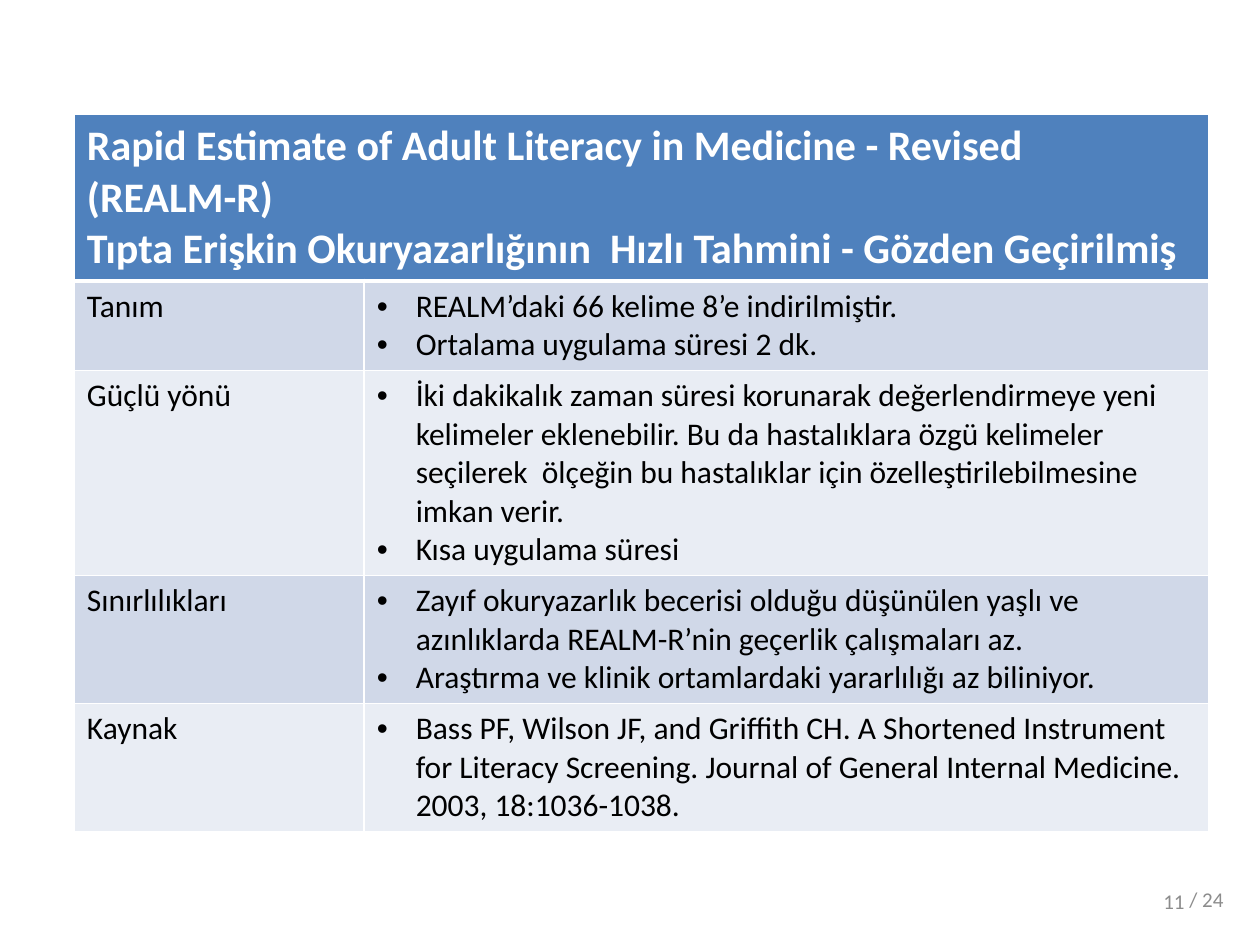
from lxml import etree
from pptx import Presentation
from pptx.dml.color import RGBColor
from pptx.enum.text import MSO_ANCHOR, PP_ALIGN
from pptx.oxml.ns import qn
from pptx.util import Inches, Pt

MIDDLE = MSO_ANCHOR.MIDDLE
CENTER = PP_ALIGN.CENTER
RIGHT = PP_ALIGN.RIGHT

FONT = "Calibri"
BLANK_LAYOUT = 6
COLORS = {
    "header": "4F81BD",
    "odd_row": "D0D8E8",
    "even_row": "E9EDF4",
    "white": "FFFFFF",
    "text": "000000",
    "footer": "8C8C8C",
}
COLUMN_WIDTHS = [2.3, 6.7]
ROW_HEIGHTS = [1.3, 0.7, 1.62, 1.01, 1.01]
HEADER = [
    "Rapid Estimate of Adult Literacy in Medicine - Revised",
    "(REALM-R)",
    "Tıpta Erişkin Okuryazarlığının  Hızlı Tahmini - Gözden Geçirilmiş",
]
ROWS = [
    ("Tanım", [
        "REALM’daki 66 kelime 8’e indirilmiştir.",
        "Ortalama uygulama süresi 2 dk.",
    ]),
    ("Güçlü yönü", [
        "İki dakikalık zaman süresi korunarak değerlendirmeye yeni kelimeler "
        "eklenebilir. Bu da hastalıklara özgü kelimeler seçilerek  ölçeğin bu "
        "hastalıklar için özelleştirilebilmesine imkan verir.",
        "Kısa uygulama süresi",
    ]),
    ("Sınırlılıkları", [
        "Zayıf okuryazarlık becerisi olduğu düşünülen yaşlı ve azınlıklarda "
        "REALM-R’nin geçerlik çalışmaları az.",
        "Araştırma ve klinik ortamlardaki yararlılığı az biliniyor.",
    ]),
    ("Kaynak", [
        "Bass PF, Wilson JF, and Griffith CH. A Shortened Instrument for "
        "Literacy Screening. Journal of General Internal Medicine. "
        "2003, 18:1036-1038.",
    ]),
]


def format_font(paragraph, size, color, bold=False):
    font = paragraph.font
    font.name = FONT
    font.size = Pt(size)
    font.bold = bold
    font.color.rgb = RGBColor.from_string(COLORS[color])


def add_bullet(paragraph):
    properties = paragraph._p.get_or_add_pPr()
    properties.set("marL", str(Inches(0.31)))
    properties.set("indent", str(-Inches(0.31)))
    bullet_font = etree.Element(qn("a:buFont"), typeface="Arial")
    bullet = etree.Element(qn("a:buChar"), char="•")
    properties.insert(0, bullet_font)
    properties.insert(1, bullet)


def set_borders(cell, bottom_width):
    properties = cell._tc.get_or_add_tcPr()
    widths = {"lnL": 1, "lnR": 1, "lnT": 1, "lnB": bottom_width}
    for position, (side, width) in enumerate(widths.items()):
        line = etree.Element(qn(f"a:{side}"), w=str(Pt(width)))
        fill = etree.SubElement(line, qn("a:solidFill"))
        etree.SubElement(fill, qn("a:srgbClr"), val=COLORS["white"])
        properties.insert(position, line)


def fill_cell(cell, lines, fill, size=18, color="text", bold=False,
              bulleted=False, bottom_width=1):
    cell.fill.solid()
    cell.fill.fore_color.rgb = RGBColor.from_string(COLORS[fill])
    set_borders(cell, bottom_width)
    cell.text_frame.text = "\n".join(lines)
    for paragraph in cell.text_frame.paragraphs:
        format_font(paragraph, size, color, bold)
        if bulleted:
            add_bullet(paragraph)


def add_scale_table(slide, left, top):
    table = slide.shapes.add_table(
        len(ROW_HEIGHTS), len(COLUMN_WIDTHS), Inches(left), Inches(top),
        Inches(sum(COLUMN_WIDTHS)), Inches(sum(ROW_HEIGHTS))).table
    for column, width in zip(table.columns, COLUMN_WIDTHS):
        column.width = Inches(width)
    for row, height in zip(table.rows, ROW_HEIGHTS):
        row.height = Inches(height)

    table.cell(0, 0).merge(table.cell(0, 1))
    for column in range(len(COLUMN_WIDTHS)):
        fill_cell(table.cell(0, column), HEADER if column == 0 else [],
                  "header", 24, "white", True, bottom_width=3)
    for index, (label, points) in enumerate(ROWS, start=1):
        fill = "odd_row" if index % 2 else "even_row"
        fill_cell(table.cell(index, 0), [label], fill)
        fill_cell(table.cell(index, 1), points, fill, bulleted=True)


def add_footer_text(slide, text, left, top, width, height, alignment):
    box = slide.shapes.add_textbox(
        Inches(left), Inches(top), Inches(width), Inches(height))
    frame = box.text_frame
    frame.word_wrap = True
    frame.vertical_anchor = MIDDLE
    paragraph = frame.paragraphs[0]
    paragraph.text = text
    paragraph.alignment = alignment
    format_font(paragraph, 12, "footer")


def main():
    presentation = Presentation()
    presentation.slide_width = Inches(10)
    presentation.slide_height = Inches(7.5)
    slide = presentation.slides.add_slide(
        presentation.slide_layouts[BLANK_LAYOUT])
    add_scale_table(slide, 0.59, 0.91)
    add_footer_text(slide, "/ 24", 9.25, 6.9, 0.65, 0.47, CENTER)
    add_footer_text(slide, "11", 7.17, 6.95, 2.33, 0.4, RIGHT)
    presentation.save("out.pptx")


if __name__ == "__main__":
    main()
